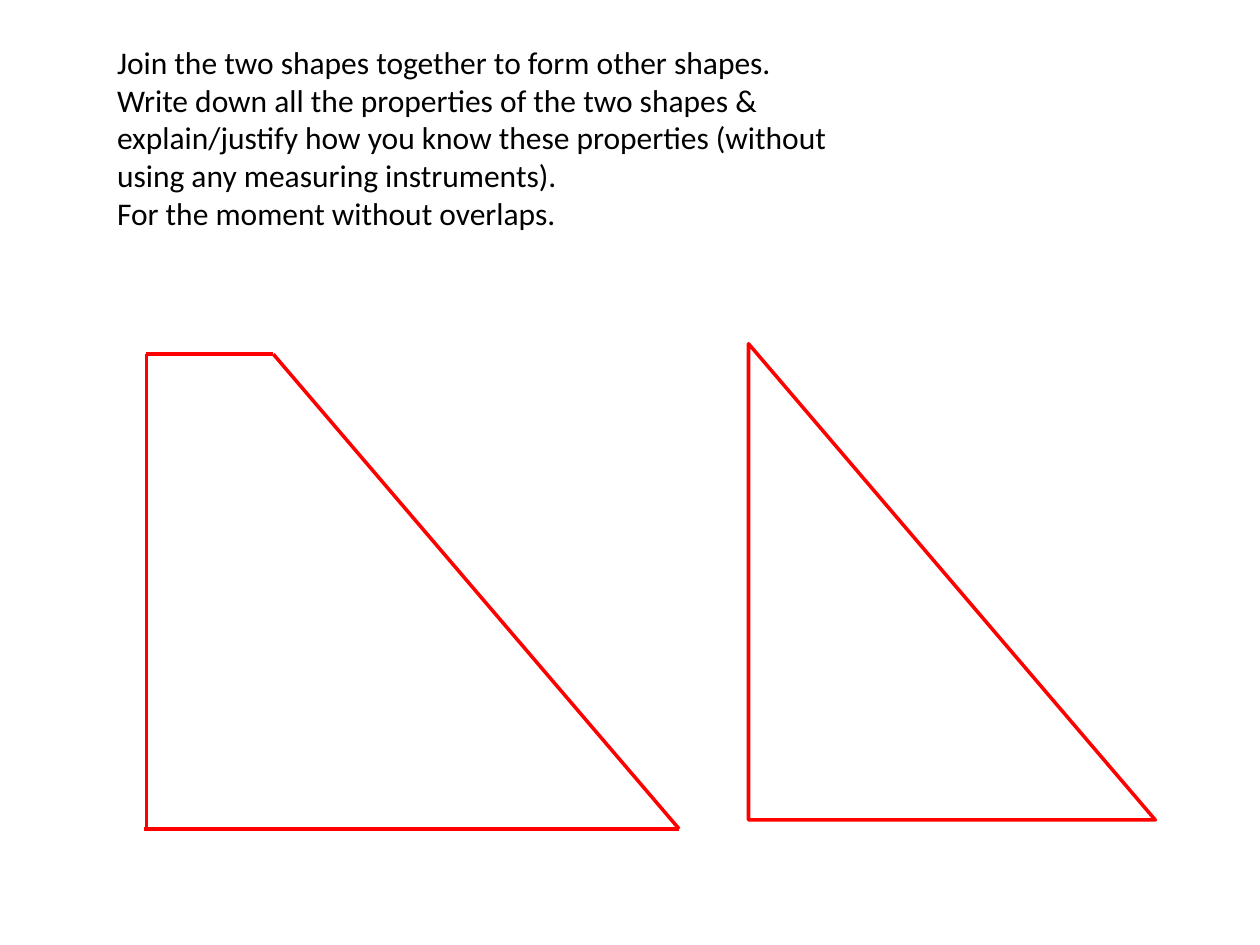
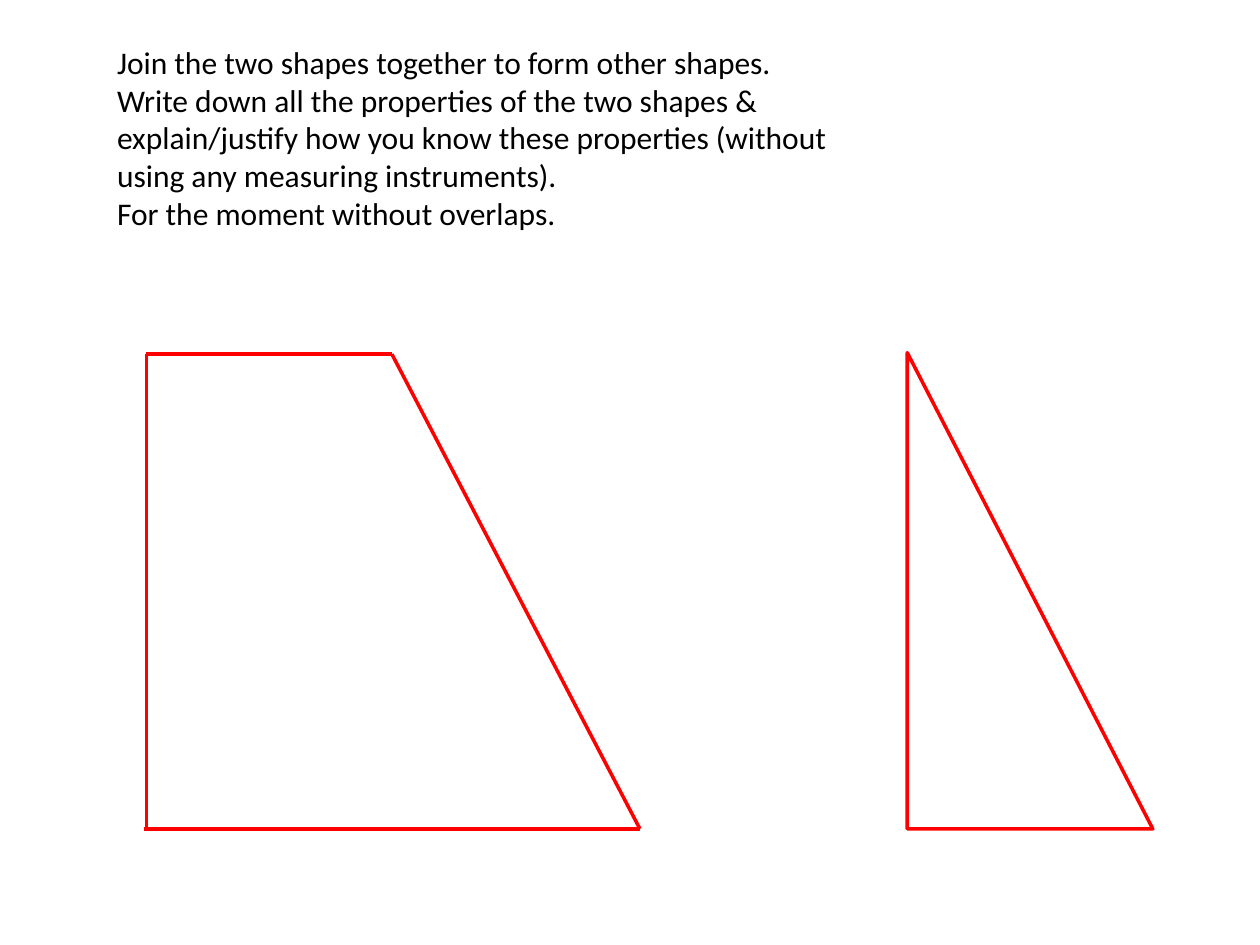
import pptx
import pptx.util
import pptx.dml.color
import pptx.enum.shapes
import pptx.enum.text
import pptx.oxml.ns
import lxml.etree

Cm = pptx.util.Cm
Pt = pptx.util.Pt

COLORS = {"page": "FFFFFF", "edge": "FF0000", "text": "000000"}
FONT = "Calibri"
LEFT, TOP, BASE = 2.95, 7.14, 16.71
TALL = 9.6
TASK = [
    "Join the two shapes together to form other shapes.",
    "Write down all the properties of the two shapes & explain/justify "
    "how you know these properties (without using any measuring instruments).",
    "For the moment without overlaps.",
]
PAIRS = [
    {"top": 5.51, "base": 13.69, "tri": (15.09, 6.93, 8.2)},
    {"top": 7.9, "base": 12.9, "tri": (18.29, 7.11, 4.95)},
]


def color(name):
    return pptx.dml.color.RGBColor.from_string(COLORS[name])


def style(line):
    line.color.rgb = color("edge")
    line.width = Pt(2)


def add_edge(slide, start, end):
    edge = slide.shapes.add_connector(
        pptx.enum.shapes.MSO_CONNECTOR.STRAIGHT,
        *(Cm(n) for n in (*start, *end)))
    style(edge.line)
    props = edge._element.spPr
    lxml.etree.SubElement(props, pptx.oxml.ns.qn("a:effectLst"))


def add_trap(slide, top, base):
    add_edge(slide, (top, TOP), (base, BASE))
    add_edge(slide, (LEFT, TOP), (LEFT, BASE))
    add_edge(slide, (LEFT - 0.05, BASE), (base, BASE))
    add_edge(slide, (LEFT, TOP), (top, TOP))


def add_tri(slide, left, top, width):
    tri = slide.shapes.add_shape(
        pptx.enum.shapes.MSO_SHAPE.RIGHT_TRIANGLE,
        Cm(left), Cm(top), Cm(width), Cm(TALL))
    tri.shadow.inherit = False
    tri.fill.background()
    style(tri.line)


def add_task(slide):
    box = slide.shapes.add_textbox(Cm(2.11), Cm(0.74), Cm(15.39), Cm(4.11))
    frame = box.text_frame
    frame.word_wrap = True
    frame.auto_size = pptx.enum.text.MSO_AUTO_SIZE.SHAPE_TO_FIT_TEXT
    for i, words in enumerate(TASK):
        para = frame.add_paragraph() if i else frame.paragraphs[0]
        run = para.add_run()
        run.text = words
        run.font.name = FONT
        run.font.size = Pt(18)
        run.font.color.rgb = color("text")


def main():
    deck = pptx.Presentation()
    deck.slide_width, deck.slide_height = Cm(25.4), Cm(19.05)
    blank = deck.slide_layouts.get_by_name("Blank")
    for pair in PAIRS:
        slide = deck.slides.add_slide(blank)
        slide.background.fill.solid()
        slide.background.fill.fore_color.rgb = color("page")
        add_trap(slide, pair["top"], pair["base"])
        add_tri(slide, *pair["tri"])
        add_task(slide)
    deck.save("out.pptx")


if __name__ == "__main__":
    main()
